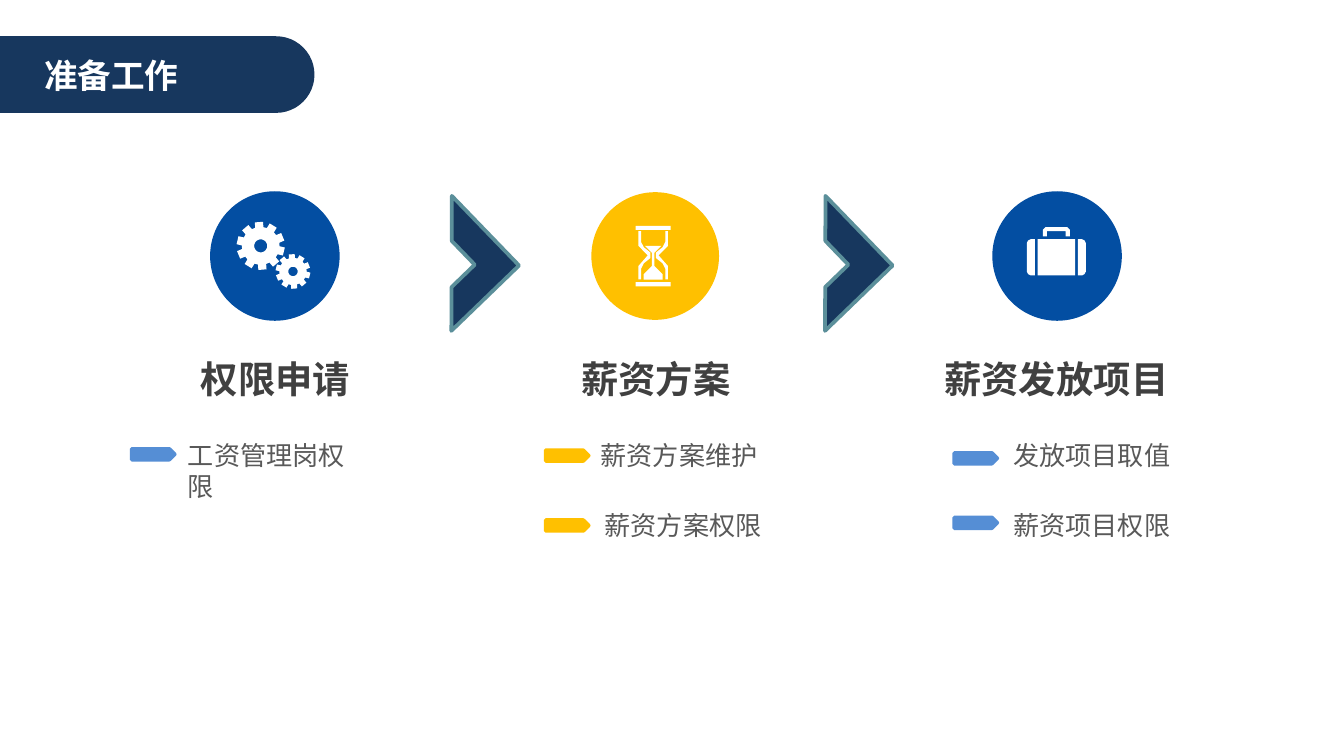
"""Build the slide on preparation work: three steps with icons and bullet tags."""
from math import cos, pi, sin

from lxml.etree import SubElement
from pptx import Presentation
from pptx.dml.color import RGBColor
from pptx.enum.shapes import MSO_SHAPE as Kind
from pptx.enum.text import PP_ALIGN as Align
from pptx.oxml.ns import qn
from pptx.util import Inches, Pt

NAVY, BLUE, SKY, GOLD = "17375E", "034EA2", "558ED5", "FFC000"
WHITE, DARK, GREY, TEAL = "FFFFFF", "404040", "595959", "5B8F9A"


def color(code):
    return RGBColor.from_string(code)


def write(frame, text, size=14, ink=GREY, bold=False, align=Align.LEFT, font="Noto Sans CJK SC"):
    para = frame.paragraphs[0]
    para.alignment = align
    run = para.add_run()
    run.text = text
    run.font.size, run.font.bold, run.font.name = Pt(size), bold, font
    run.font.color.rgb = color(ink)
    SubElement(run.font._element, qn("a:ea")).set("typeface", font)


def ring(x, y, r, sides=24):
    turns = [2 * pi * i / sides for i in range(sides)]
    return [(x + r * cos(t), y + r * sin(t)) for t in turns]


def gear(x, y, r, teeth=10):
    points = []
    for i in range(teeth):
        mid = 2 * pi * i / teeth + 0.24
        for turn, part in ((-0.22, 0.78), (-0.17, 1), (0.17, 1), (0.22, 0.78)):
            points.append((x + r * part * cos(mid + turn), y + r * part * sin(mid + turn)))
    return [points, ring(x, y, r * 0.27)]


def box(x, y, w, h):
    return [(x, y), (x + w, y), (x + w, y + h), (x, y + h)]


def flip(points, axis):
    return [(2 * axis - x, y) for x, y in points]


class Deck:
    def __init__(self):
        self.show = Presentation()
        self.show.slide_width = Inches(10)
        self.show.slide_height = Inches(10) * 9 // 16
        self.slide = self.show.slides.add_slide(self.show.slide_layouts[6])

    def paint(self, shape, fill, line=None, width=1):
        shape.shadow.inherit = False
        shape.fill.solid()
        shape.fill.fore_color.rgb = color(fill)
        if line:
            shape.line.color.rgb = color(line)
            shape.line.width = Pt(width)
        else:
            shape.line.fill.background()
        return shape

    def shape(self, kind, x, y, w, h, fill, line=None, width=1):
        item = self.slide.shapes.add_shape(kind, Inches(x), Inches(y), Inches(w), Inches(h))
        return self.paint(item, fill, line, width)

    def icon(self, *loops):
        pen = None
        for loop in loops:
            start, *rest = [(Inches(x), Inches(y)) for x, y in loop]
            if pen:
                pen.move_to(*start)
            else:
                pen = self.slide.shapes.build_freeform(*start)
            pen.add_line_segments(rest, close=True)
        return self.paint(pen.convert_to_shape(), WHITE)

    def text(self, x, y, w, h, text, pad=(0.1, 0.05), **style):
        frame = self.slide.shapes.add_textbox(Inches(x), Inches(y), Inches(w), Inches(h)).text_frame
        frame.word_wrap = True
        frame.margin_left = frame.margin_right = Inches(pad[0])
        frame.margin_top = frame.margin_bottom = Inches(pad[1])
        write(frame, text, **style)

    def tag(self, x, y, fill):
        self.shape(Kind.PENTAGON, x, y, 0.32, 0.08, fill, fill, 2)

    def arrow(self, x):
        self.shape(Kind.HALF_FRAME, x, 1.6, 0.7, 0.72, NAVY, TEAL, 2).rotation = 136

    def gears(self):
        self.icon(*gear(1.94, 1.83, 0.18))
        self.icon(*gear(2.18, 2.02, 0.13))

    def glass(self):
        axis = 4.86
        self.icon(box(4.73, 1.68, 0.26, 0.03), box(4.73, 2.1, 0.26, 0.03))
        wall = [(4.77, 1.72), (4.77, 1.8), (4.79, 1.84), (4.84, 1.88), (4.84, 1.92),
                (4.79, 1.96), (4.77, 2), (4.77, 2.08), (4.75, 2.08), (4.75, 1.98),
                (4.82, 1.9), (4.75, 1.83), (4.75, 1.72)]
        self.icon(wall, flip(wall, axis))
        sand = [(4.8, 1.83), (4.85, 1.88), (4.85, 1.98), (4.79, 2.04), (4.79, 2.08)]
        self.icon(sand + flip(sand[::-1], axis))

    def case(self):
        axis = 7.86
        half = [(7.76, 1.76), (7.76, 1.71), (7.78, 1.69)]
        hole = [(7.79, 1.72), (7.79, 1.76)]
        grip = half + flip(half[::-1], axis) + flip(hole[::-1], axis) + hole
        side = [(7.7, 1.78), (7.67, 1.78), (7.65, 1.79), (7.64, 1.81),
                (7.64, 2.02), (7.65, 2.04), (7.67, 2.05), (7.7, 2.05)]
        self.icon(grip, side, box(7.72, 1.78, 0.28, 0.27), flip(side, axis))


def main():
    deck = Deck()
    deck.shape(Kind.ROUNDED_RECTANGLE, -0.3, 0.27, 2.64, 0.57, NAVY).adjustments[0] = 0.5
    deck.text(0.23, 0.36, 2.01, 0.4, "准备工作", size=18, ink=WHITE, bold=True)

    steps = [
        (1.57, BLUE, BLUE, deck.gears, "权限申请", 0.95, 2.2, SKY, 0.98,
         [(1.3, "工资管理岗权限", 3.34)]),
        (4.4, GOLD, None, deck.glass, "薪资方案", 3.44, 2.88, GOLD, 4.06,
         [(4.37, "薪资方案维护", 3.35), (4.4, "薪资方案权限", 3.87)]),
        (7.39, BLUE, BLUE, deck.case, "薪资发放项目", 6.86, 2, SKY, 7.1,
         [(7.44, "发放项目取值", 3.37), (7.44, "薪资项目权限", 3.85)]),
    ]
    for left, fill, edge, draw, head, start, wide, tint, tab, notes in steps:
        deck.shape(Kind.OVAL, left, 1.43, 0.95, 0.95, fill, edge)
        draw()
        deck.text(start, 2.61, wide, 0.41, head, pad=(0.07, 0.04),
                  size=20, ink=DARK, bold=True, align=Align.CENTER)
        for row, (x, note, y) in enumerate(notes):
            deck.tag(tab, y, tint)
            deck.text(x, 3.22 + 0.52 * row, 1.5, 0.34, note)

    for x in (3.01, 5.79):
        deck.arrow(x)
    deck.show.save("out.pptx")


if __name__ == "__main__":
    main()
